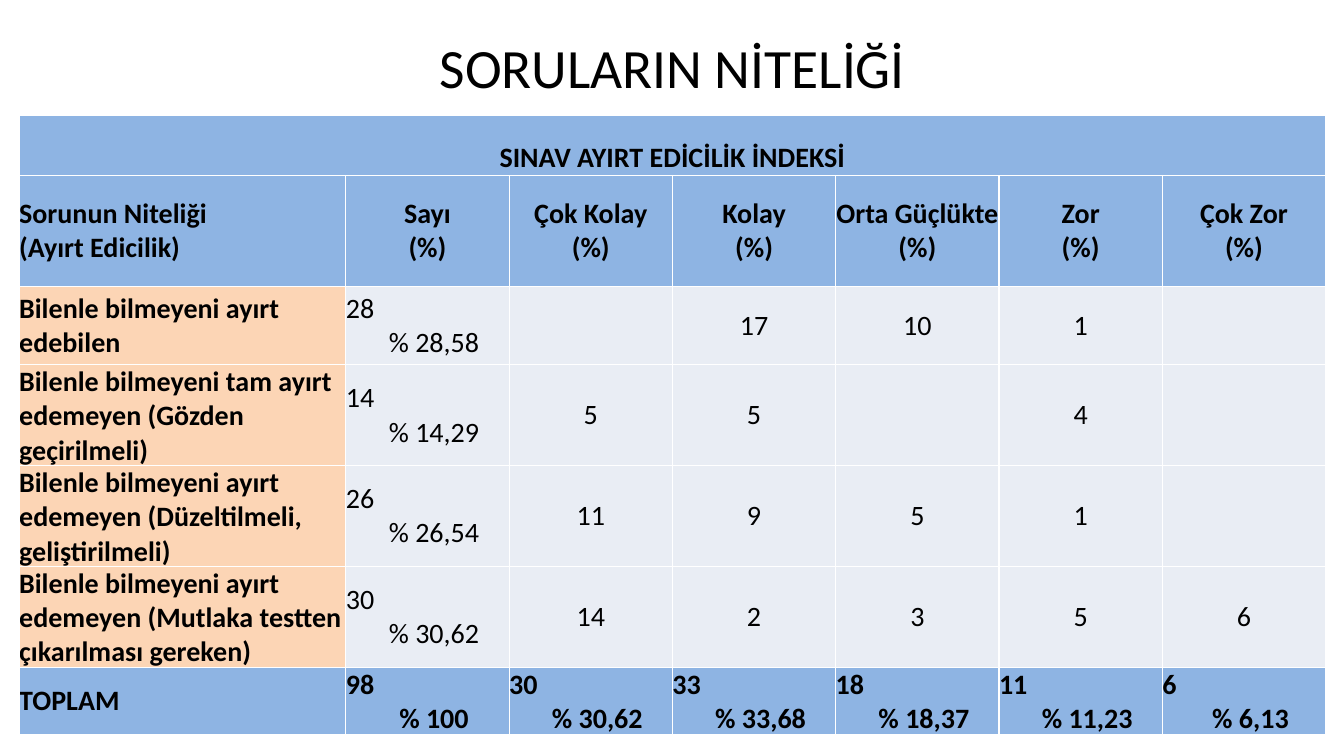
from dataclasses import dataclass

from lxml import etree
from pptx import Presentation
from pptx.dml.color import RGBColor
from pptx.enum.text import MSO_ANCHOR, PP_ALIGN
from pptx.oxml.ns import qn
from pptx.util import Inches, Pt

LEFT, CENTER = PP_ALIGN.LEFT, PP_ALIGN.CENTER
MIDDLE, BOTTOM = MSO_ANCHOR.MIDDLE, MSO_ANCHOR.BOTTOM


@dataclass(frozen=True)
class Theme:
    """Colours, font and type sizes of the slide."""
    font: str = "Calibri"
    text: str = "000000"
    border: str = "FFFFFF"
    header: str = "8EB4E3"
    label: str = "FCD5B5"
    body: str = "E9EDF4"
    title_size: float = 39.6
    table_size: float = 20
    border_width: float = 1


class SlideBuilder:
    """Adds styled elements to the current slide."""

    def __init__(self, slide, theme):
        """Keep the slide and its theme."""
        self.slide = slide
        self.theme = theme

    def format_paragraph(self, paragraph, text, size, bold, alignment):
        """Write text into a paragraph and format its runs."""
        paragraph.text = text
        paragraph.alignment = alignment
        formats = {"name": self.theme.font, "size": Pt(size), "bold": bold}
        for run in paragraph.runs:
            for name, value in formats.items():
                setattr(run.font, name, value)
            run.font.color.rgb = RGBColor.from_string(self.theme.text)

    def add_title(self, text, left, top, width, height):
        """Add the centred slide title."""
        shape = self.slide.shapes.add_textbox(
            Inches(left), Inches(top), Inches(width), Inches(height))
        frame = shape.text_frame
        frame.word_wrap = True
        frame.vertical_anchor = MIDDLE
        self.format_paragraph(frame.paragraphs[0], text,
                              self.theme.title_size, False, CENTER)

    def add_table(self, left, top, widths, heights):
        """Add an unbanded table with the given column widths and row heights."""
        table = self.slide.shapes.add_table(
            len(heights), len(widths), Inches(left), Inches(top),
            Inches(sum(widths)), Inches(sum(heights))).table
        table.first_row = table.horz_banding = False
        for column, width in zip(table.columns, widths):
            column.width = Inches(width)
        for row, height in zip(table.rows, heights):
            row.height = Inches(height)
        return table

    def add_borders(self, cell):
        """Draw a thin line on every side of a cell."""
        properties = cell._tc.get_or_add_tcPr()
        for side in ("lnL", "lnR", "lnT", "lnB"):
            line = etree.SubElement(properties, qn(f"a:{side}"),
                                    w=str(Pt(self.theme.border_width)))
            fill = etree.SubElement(line, qn("a:solidFill"))
            etree.SubElement(fill, qn("a:srgbClr"), val=self.theme.border)

    def fill_cell(self, cell, content, color, bold=False, alignment=CENTER,
                  anchor=MIDDLE):
        """Style a cell; a (count, share) pair becomes two paragraphs."""
        self.add_borders(cell)
        cell.fill.solid()
        cell.fill.fore_color.rgb = RGBColor.from_string(color)
        margins = dict.fromkeys(
            ("margin_left", "margin_right", "margin_top", "margin_bottom"), 0)
        for name, value in {**margins, "vertical_anchor": anchor}.items():
            setattr(cell, name, value)
        if not content:
            return
        frame = cell.text_frame
        first = frame.paragraphs[0]
        size = self.theme.table_size
        if isinstance(content, tuple):
            count, share = content
            self.format_paragraph(first, count, size, bold, LEFT)
            second = frame.add_paragraph()
            self.format_paragraph(second, share, size, bold, CENTER)
            second._p.get_or_add_pPr().set("marL", str(Inches(0.13)))
        else:
            self.format_paragraph(first, content, size, bold, alignment)


COLUMN_HEADS = ["Sorunun Niteliği\n(Ayırt Edicilik)"] + [
    f"{name}\n(%)" for name in
    ("Sayı", "Çok Kolay", "Kolay", "Orta Güçlükte", "Zor", "Çok Zor")]
QUALITY_ROWS = [
    ["Bilenle bilmeyeni ayırt\nedebilen",
     ("28", "% 28,58"), "", "17", "10", "1", ""],
    ["Bilenle bilmeyeni tam ayırt edemeyen (Gözden geçirilmeli)",
     ("14", "% 14,29"), "5", "5", "", "4", ""],
    ["Bilenle bilmeyeni ayırt edemeyen (Düzeltilmeli, geliştirilmeli)",
     ("26", "% 26,54"), "11", "9", "5", "1", ""],
    ["Bilenle bilmeyeni ayırt edemeyen (Mutlaka testten çıkarılması gereken)",
     ("30", "% 30,62"), "14", "2", "3", "5", "6"],
]
TOTALS = ["TOPLAM", ("98", "% 100"), ("30", "% 30,62"), ("33", "% 33,68"),
          ("18", "% 18,37"), ("11", "% 11,23"), ("6", "% 6,13")]


def main():
    """Build the slide and save it."""
    presentation = Presentation()
    presentation.slide_width = Inches(13.33)
    presentation.slide_height = Inches(7.5)
    theme = Theme()
    slide = presentation.slides.add_slide(presentation.slide_layouts[6])
    builder = SlideBuilder(slide, theme)
    builder.add_title("SORULARIN NİTELİĞİ", 0.67, 0.3, 12, 0.72)

    table = builder.add_table(0.19, 1.14, [3.24] + [1.62] * 6,
                              [0.6, 1.1, 0.78] + [0.91] * 3 + [0.61])
    for column in range(len(COLUMN_HEADS)):
        heading = "" if column else "SINAV AYIRT EDİCİLİK İNDEKSİ"
        builder.fill_cell(table.cell(0, column), heading, theme.header,
                          bold=True, anchor=BOTTOM)
    table.cell(0, 0).merge(table.cell(0, len(COLUMN_HEADS) - 1))

    rows = [COLUMN_HEADS, *QUALITY_ROWS, TOTALS]
    for row_index, row in enumerate(rows, start=1):
        is_quality = row in QUALITY_ROWS
        for column, content in enumerate(row):
            is_label = column == 0
            color = theme.header
            if is_quality:
                color = theme.label if is_label else theme.body
            builder.fill_cell(table.cell(row_index, column), content, color,
                              bold=is_label or not is_quality,
                              alignment=LEFT if is_label else CENTER)
    presentation.save("out.pptx")


if __name__ == "__main__":
    main()
